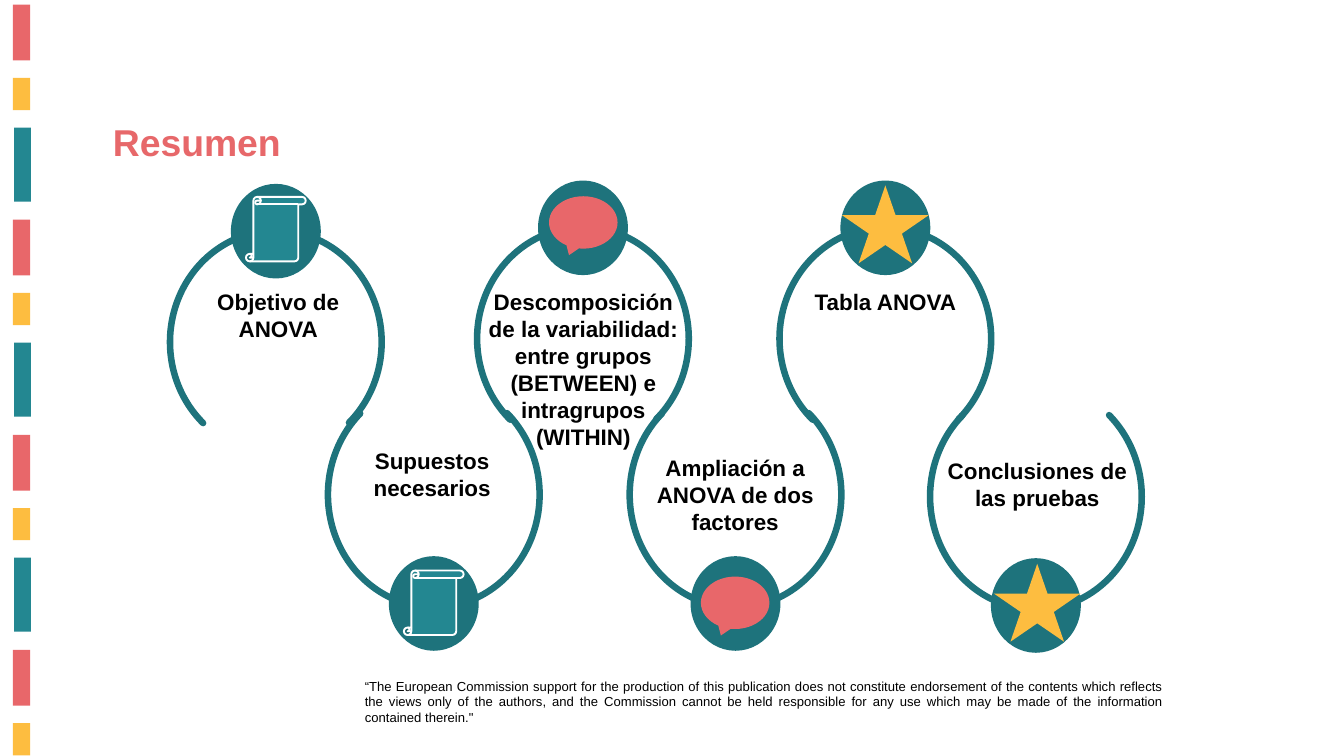
from typing import NamedTuple

from lxml import etree
from pptx import Presentation
from pptx.dml.color import RGBColor
from pptx.enum.shapes import MSO_SHAPE
from pptx.enum.text import MSO_ANCHOR, MSO_AUTO_SIZE, PP_ALIGN
from pptx.util import Inches, Pt

ARC, OVAL, RECT = MSO_SHAPE.ARC, MSO_SHAPE.OVAL, MSO_SHAPE.RECTANGLE
STAR, SCROLL = MSO_SHAPE.STAR_5_POINT, MSO_SHAPE.VERTICAL_SCROLL
BUBBLE = MSO_SHAPE.OVAL_CALLOUT
LEFT, CENTER, JUSTIFY = PP_ALIGN.LEFT, PP_ALIGN.CENTER, PP_ALIGN.JUSTIFY
TOP = MSO_ANCHOR.TOP
NO_FIT = MSO_AUTO_SIZE.NONE

FONT = "Arial"
COLORS = {
    "red": "E8676A", "title": "E7686A", "yellow": "FDBD40", "teal": "238791",
    "ring": "1E737C", "white": "FFFFFF", "black": "000000",
}


class Box(NamedTuple):
    x: float
    y: float
    w: float
    h: float


class Bar(NamedTuple):
    box: Box
    color: str


class Icon(NamedTuple):
    kind: int
    w: float
    h: float
    fill: str
    line: str | None = None


class Step(NamedTuple):
    x: float          # ring corner
    y: float
    low: bool         # ring opens upwards, dot at its foot
    icon: Icon
    dx: float         # icon offset from the dot
    dy: float
    text: str
    label: Box


# Side stripe: three bars that repeat down the edge
PERIOD = 3.2
BARS = [
    Bar(Box(0.19, 0.07, 0.26, 0.83), "red"),
    Bar(Box(0.19, 1.16, 0.26, 0.48), "yellow"),
    Bar(Box(0.21, 1.9, 0.25, 1.1), "teal"),
]
BAR_COUNT = 11

scroll = Icon(SCROLL, 0.89, 0.96, "teal", "white")
bubble = Icon(BUBBLE, 1.02, 0.78, "red")
star = Icon(STAR, 1.29, 1.16, "yellow")

# Lower rings come first, so the upper ones lie over their ends
STEPS = [
    Step(4.88, 5.68, True, scroll, 0.21, 0.2, "Supuestos necesarios",
         Box(4.89, 6.61, 3.08, 0.91)),
    Step(9.37, 5.68, True, bubble, 0.14, 0.29,
         "Ampliación a ANOVA de dos factores", Box(9.49, 6.71, 2.9, 1.31)),
    Step(13.84, 5.71, True, star, 0.03, 0.07, "Conclusiones de las pruebas",
         Box(13.89, 6.75, 3.09, 0.91)),
    Step(11.6, 3.38, False, star, 0.01, 0.06, "Tabla ANOVA",
         Box(11.8, 4.24, 2.75, 0.5)),
    Step(7.1, 3.38, False, bubble, 0.15, 0.22,
         "Descomposición de la variabilidad: entre grupos (BETWEEN) e "
         "intragrupos (WITHIN)", Box(7.14, 4.24, 3.08, 2.52)),
    Step(2.53, 3.43, False, scroll, 0.21, 0.18, "Objetivo de ANOVA",
         Box(2.69, 4.24, 2.9, 0.91)),
]

NOTE = (
    "“The European Commission support for the production of this publication "
    "does not constitute endorsement of the contents which reflects the views "
    "only of the authors, and the Commission cannot be held responsible for "
    "any use which may be made of the information contained therein.\""
)


def rgb(name: str) -> RGBColor:
    return RGBColor.from_string(COLORS[name])


def add_form(shapes, kind: int, box: Box, fill: str | None = None,
             line: str | None = None, width: float = 2):
    form = shapes.add_shape(kind, *map(Inches, box))
    form.shadow.inherit = False
    if fill:
        form.fill.solid()
        form.fill.fore_color.rgb = rgb(fill)
    else:
        form.fill.background()
    if line:
        form.line.color.rgb = rgb(line)
        form.line.width = Pt(width)
    else:
        form.line.fill.background()
    return form


def set_text(shape, text: str, size: float, color: str, align: int,
             bold: bool = False) -> None:
    frame = shape.text_frame
    frame.word_wrap = True
    frame.auto_size = NO_FIT
    frame.vertical_anchor = TOP
    frame.text = text
    para = frame.paragraphs[0]
    para.alignment = align
    font = para.runs[0].font
    font.name, font.size, font.bold = FONT, Pt(size), bold
    font.color.rgb = rgb(color)


def add_label(shapes, box: Box, *style) -> None:
    set_text(shapes.add_textbox(*map(Inches, box)), *style)


def add_ring(shapes, step: Step) -> None:
    group = shapes.add_group_shape().shapes
    high = 3.36 if step.low else 3.32
    ring = add_form(group, ARC, Box(step.x, step.y, 3.15, high),
                    line="ring", width=7)
    ring.adjustments[0] = 79.141
    ring.adjustments[1] = 28.684
    ring.rotation = 180 if step.low else 0
    ring.line._get_or_add_ln().set("cap", "rnd")

    # Dot and its icon
    x = step.x + 0.92
    y = step.y + (2.61 if step.low else -0.68)
    add_form(group, OVAL, Box(x, y, 1.31, 1.38), "ring", "ring")
    icon = step.icon
    add_form(shapes, icon.kind, Box(x + step.dx, y + step.dy, icon.w, icon.h),
             icon.fill, icon.line)


def main() -> None:
    deck = Presentation()
    deck.slide_width, deck.slide_height = Inches(20), Inches(11.25)
    slide = deck.slides.add_slide(deck.slide_layouts[5])
    shapes = slide.shapes

    # Stripe
    for i in range(BAR_COUNT):
        turn, part = divmod(i, len(BARS))
        box, color = BARS[part]
        add_form(shapes, RECT, box._replace(y=box.y + turn * PERIOD), color)

    # Title
    title = shapes.title
    title.left, title.top = Inches(1.58), Inches(1.72)
    title.width, title.height = Inches(6.58), Inches(0.77)
    set_text(title, "Resumen", 40, "title", LEFT, True)

    # Chain of steps, then the captions on top
    for step in STEPS:
        add_ring(shapes, step)
    for step in STEPS:
        add_label(shapes, step.label, step.text, 24, "black", CENTER, True)

    # Disclaimer
    add_label(shapes, Box(5.33, 10.04, 12.08, 0.81), NOTE, 14, "black", JUSTIFY)

    deck.save("out.pptx")


if __name__ == "__main__":
    main()
